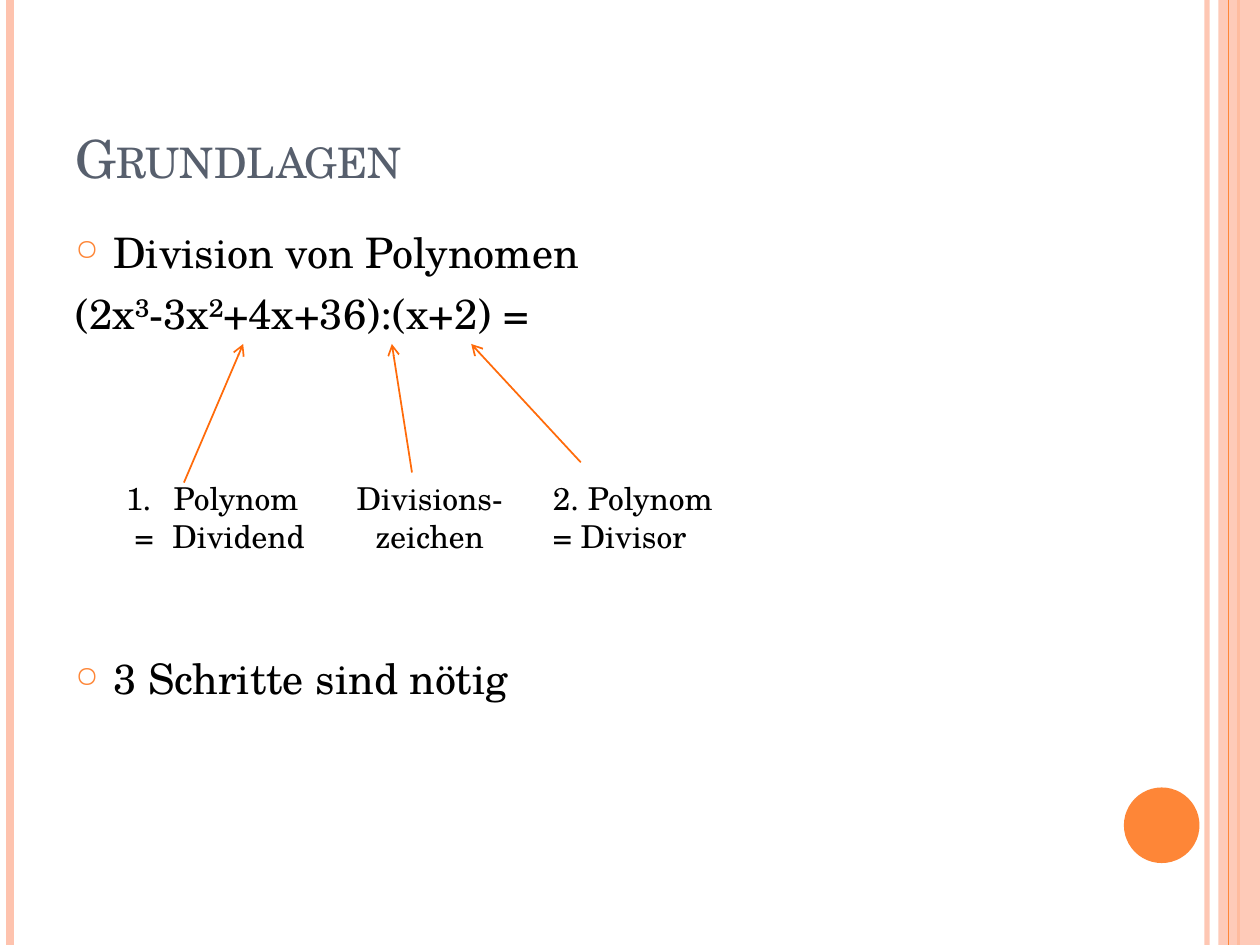
from dataclasses import dataclass

from pptx import Presentation
from pptx.dml.color import RGBColor
from pptx.enum.shapes import MSO_CONNECTOR, MSO_SHAPE
from pptx.enum.text import MSO_ANCHOR, PP_ALIGN
from pptx.oxml.ns import qn
from pptx.util import Inches, Pt
from lxml.etree import SubElement


@dataclass(frozen=True)
class Theme:
    font: str = "TeX Gyre Schola"
    ink: str = "000000"
    head: str = "575F6D"
    main: str = "FE8637"
    pale: str = "FEC3AE"
    arrow: str = "FF6B0A"
    title: int = 30
    body: int = 24
    note: int = 18


THEME = Theme()


def style(obj, form):
    for key, val in form.items():
        setattr(obj, key, val)


def add(node, tag, **attrs):
    return SubElement(node, qn(tag), attrs)


def paint(fill, color, alpha=100):
    fill.solid()
    fill.fore_color.rgb = RGBColor.from_string(color)
    if alpha < 100:
        tint = next(fill._xPr.iter(qn("a:srgbClr")))
        add(tint, "a:alpha", val=str(alpha * 1000))


def draw_line(slide, start, end, color, width, alpha=100, tip=False):
    points = [Inches(v) for v in (*start, *end)]
    line = slide.shapes.add_connector(MSO_CONNECTOR.STRAIGHT, *points)
    line.line.width = Pt(width)
    paint(line.line.fill, color, alpha)
    if tip:
        add(line.line._get_or_add_ln(), "a:tailEnd", type="arrow")
    add(line._element.spPr, "a:effectLst")


def draw_shape(slide, kind, box, color, alpha=100):
    shape = slide.shapes.add_shape(kind, *[Inches(v) for v in box])
    shape.shadow.inherit = False
    shape.line.fill.background()
    paint(shape.fill, color, alpha)


def add_box(slide, box, **form):
    frame = slide.shapes.add_textbox(*[Inches(v) for v in box]).text_frame
    style(frame, {"word_wrap": True, **form})
    return frame


def add_para(frame, text, size, color=THEME.ink, hang=None, **form):
    para = frame.paragraphs[0]
    if para.runs:
        para = frame.add_paragraph()
    style(para, form)
    run = para.add_run()
    run.text = text
    style(run.font, {"name": THEME.font, "size": Pt(size)})
    run.font.color.rgb = RGBColor.from_string(color)
    props = para._p.get_or_add_pPr()
    if hang:
        left, first = hang
        props.set("marL", str(Inches(left)))
        props.set("indent", str(Inches(first)))
    return run, props


def add_ring(props):
    add(add(props, "a:buClr"), "a:srgbClr", val=THEME.main)
    add(props, "a:buSzPct", val="70000")
    add(props, "a:buChar", char="○")


def draw_frame(slide):
    # Vertical stripes, from back to front, and the corner disc
    def stripe(x, *look):
        draw_line(slide, (x, 0), (x, 7.5), *look)

    stripe(9.58, THEME.pale, 3, 93)
    stripe(0.08, THEME.pale, 4.5)
    stripe(9.83, THEME.main, 1.5)
    draw_shape(slide, MSO_SHAPE.RECTANGLE, (9.67, 0, 0.33, 7.5), THEME.pale, 87)
    stripe(9.75, THEME.main, 0.75)
    draw_shape(slide, MSO_SHAPE.OVAL, (8.92, 6.25, 0.6, 0.6), THEME.main)


def draw_text(slide):
    # Title in small capitals
    frame = add_box(slide, (0.5, 0.3, 8.17, 1.25),
                    vertical_anchor=MSO_ANCHOR.BOTTOM)
    run, _ = add_para(frame, "Grundlagen", THEME.title, THEME.head)
    run.font._element.set("cap", "small")

    # Body; the wide gap leaves room for the labels
    frame = add_box(slide, (0.5, 1.75, 8.17, 5.33))
    for text, gap, ring in (
        ("Division von Polynomen", 6, True),
        ("(2x³-3x²+4x+36):(x+2) =", 6, False),
        ("3 Schritte sind nötig", 180, True),
    ):
        _, props = add_para(frame, text, THEME.body, hang=(0.3, -0.3),
                            space_before=Pt(gap))
        if ring:
            add_ring(props)


def draw_notes(slide):
    # Labels below the formula
    size = THEME.note
    frame = add_box(slide, (0.9, 3.75, 1.73, 0.71))
    _, props = add_para(frame, "Polynom", size, hang=(0.38, -0.38))
    add(props, "a:buFont", typeface="+mj-lt")
    add(props, "a:buAutoNum", type="arabicPeriod")
    add_para(frame, "=\tDividend", size, hang=(0.37, -0.3))

    frame = add_box(slide, (2.64, 3.75, 1.54, 0.71))
    add_para(frame, "Divisions- zeichen", size, alignment=PP_ALIGN.CENTER)

    frame = add_box(slide, (4.29, 3.75, 1.5, 0.71))
    for text in ("2. Polynom", "= Divisor"):
        add_para(frame, text, size)

    # Arrows from the labels up to the formula
    for start, tip in (((1.46, 3.83), 1.93), ((3.27, 3.75), 3.11),
                       ((4.61, 3.67), 3.74)):
        draw_line(slide, start, (tip, 2.73), THEME.arrow, 1, tip=True)


def main():
    deck = Presentation()
    style(deck, {"slide_width": Inches(10), "slide_height": Inches(7.5)})
    slide = deck.slides.add_slide(deck.slide_layouts[6])
    draw_frame(slide)
    draw_text(slide)
    draw_notes(slide)
    deck.save("out.pptx")


if __name__ == "__main__":
    main()
